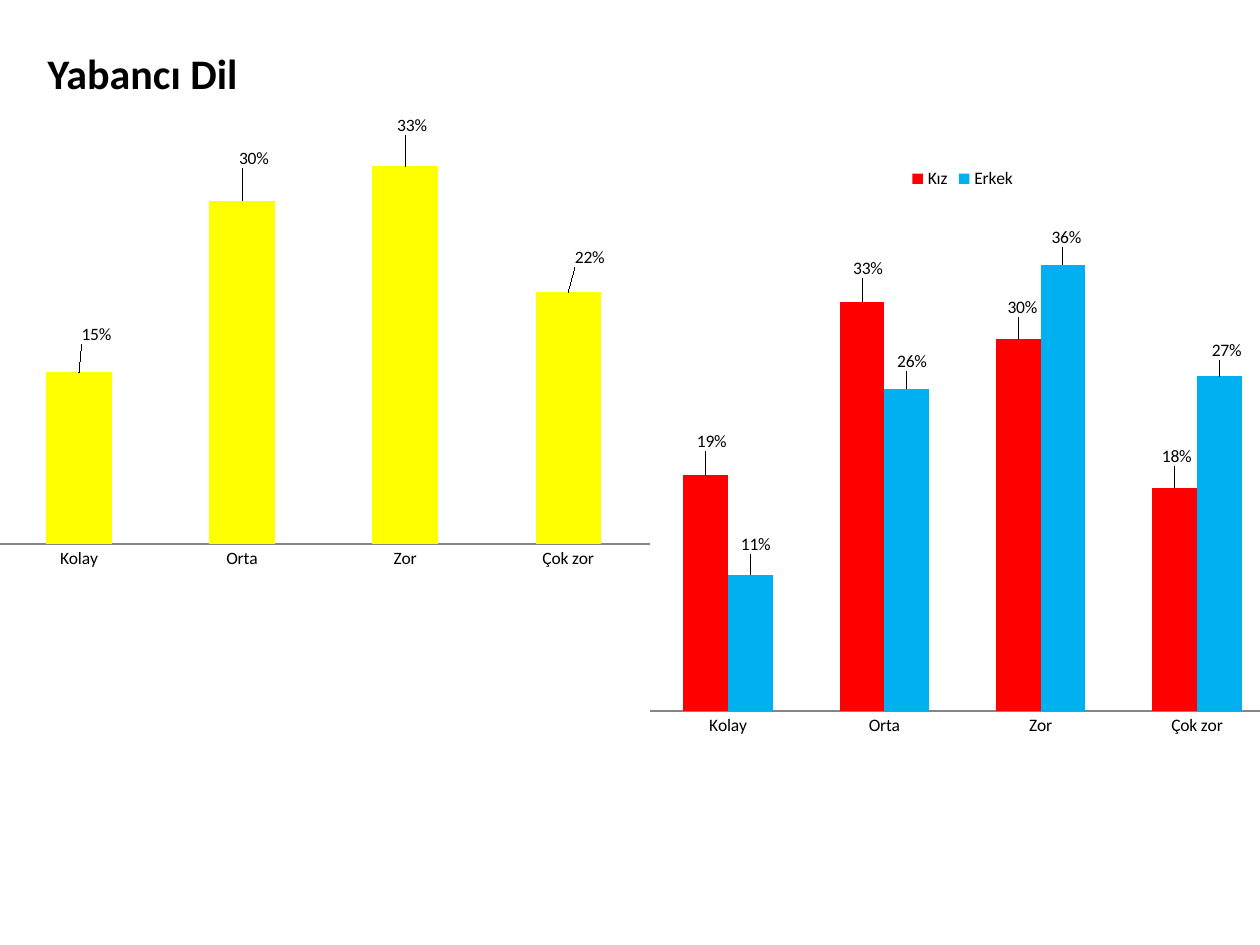
import lxml.etree
import pptx
import pptx.chart.data
import pptx.dml.color
import pptx.enum.chart
import pptx.enum.text
import pptx.oxml.ns
import pptx.util

Cm = pptx.util.Cm
FONT = "Calibri"
CATEGORIES = ["Kolay", "Orta", "Zor", "Çok zor"]

# name, colour, values, label shifts in percent of the chart size
ALL_STUDENTS = [
    ("Series 1", "FFFF00", [0.15, 0.3, 0.33, 0.22],
     [(2.5, -4.7), (1.7, -5.6), (1, -5.3), (3.1, -4.1)]),
]
BY_GENDER = [
    ("Kız", "FF0000", [0.19, 0.33, 0.3, 0.18],
     [(0.9, -3.1), (0.9, -3.1), (0.6, -2.8), (0.3, -2.8)]),
    ("Erkek", "00B0F0", [0.11, 0.26, 0.36, 0.27],
     [(0.8, -2.6), (0.8, -2.1), (0.5, -2.1), (1.1, -1.8)]),
]


def colour(value):
    return pptx.dml.color.RGBColor.from_string(value)


def insert_layout(parent, index, settings):
    qn = pptx.oxml.ns.qn
    layout = lxml.etree.Element(qn("c:layout"))
    manual = lxml.etree.SubElement(layout, qn("c:manualLayout"))
    for name, value in settings.items():
        lxml.etree.SubElement(manual, qn("c:" + name)).set("val", str(value))
    parent.insert(index, layout)


def add_title(slide, left, top, width, height, text):
    shape = slide.shapes.add_textbox(left, top, width, height)
    frame = shape.text_frame
    frame.word_wrap = True
    frame.vertical_anchor = pptx.enum.text.MSO_ANCHOR.MIDDLE
    paragraph = frame.paragraphs[0]
    paragraph.text = text
    paragraph.font.name = FONT
    paragraph.font.size = pptx.util.Pt(24)
    paragraph.font.bold = True
    paragraph.font.color.rgb = colour("000000")


def style_series(series, fill, shifts):
    series.format.fill.solid()
    series.format.fill.fore_color.rgb = colour(fill)
    series.invert_if_negative = False
    labels = series.data_labels
    labels.show_value = True
    labels.number_format = "0%"
    labels.number_format_is_linked = False
    labels.position = pptx.enum.chart.XL_LABEL_POSITION.OUTSIDE_END
    for index, (x, y) in enumerate(shifts):
        series.points[index].data_label.position = labels.position
        label = series._element.xpath("c:dLbls/c:dLbl")[index]
        insert_layout(label, 1, {"x": x / 100, "y": y / 100})


def add_column_chart(slide, left, top, width, height, rows, maximum, plot_box):
    data = pptx.chart.data.CategoryChartData(number_format="0%")
    data.categories = CATEGORIES
    for name, _, values, _ in rows:
        data.add_series(name, values)
    chart = slide.shapes.add_chart(
        pptx.enum.chart.XL_CHART_TYPE.COLUMN_CLUSTERED,
        left, top, width, height, data).chart
    chart.has_title = False
    chart.font.name = FONT
    chart.font.size = pptx.util.Pt(10)
    chart.font.color.rgb = colour("000000")
    chart.has_legend = len(rows) > 1
    if chart.has_legend:
        chart.legend.position = pptx.enum.chart.XL_LEGEND_POSITION.TOP
        chart.legend.include_in_layout = False

    chart.value_axis.visible = False
    chart.value_axis.has_major_gridlines = False
    chart.value_axis.minimum_scale = 0
    chart.value_axis.maximum_scale = maximum
    chart.category_axis.major_tick_mark = pptx.enum.chart.XL_TICK_MARK.NONE
    chart.category_axis.format.line.color.rgb = colour("868686")

    plot = chart.plots[0]
    plot.vary_by_categories = False
    plot.gap_width = 150
    plot.overlap = 0
    for series, (_, fill, _, shifts) in zip(plot.series, rows):
        style_series(series, fill, shifts)

    area = chart._chartSpace.xpath("c:chart/c:plotArea")[0]
    for old_layout in area.xpath("c:layout"):
        area.remove(old_layout)
    settings = {"layoutTarget": "inner", "xMode": "edge", "yMode": "edge"}
    settings.update(zip("xywh", plot_box))
    insert_layout(area, 0, settings)


def main():
    presentation = pptx.Presentation()
    presentation.slide_width = Cm(25.4)
    presentation.slide_height = Cm(19.05)
    slide = presentation.slides.add_slide(presentation.slide_layouts[6])
    add_title(slide, Cm(0.71), Cm(0.84), Cm(25.4), Cm(1.27), "Yabancı Dil")
    add_column_chart(slide, Cm(-0.89), Cm(2.34), Cm(14), Cm(9.8),
                     ALL_STUDENTS, 0.35, (0.06, 0.05, 0.94, 0.83))
    add_column_chart(slide, Cm(12.7), Cm(3.12), Cm(13.41), Cm(12.19),
                     BY_GENDER, 0.4, (0.03, 0.1, 0.94, 0.82))
    presentation.save("out.pptx")


if __name__ == "__main__":
    main()
